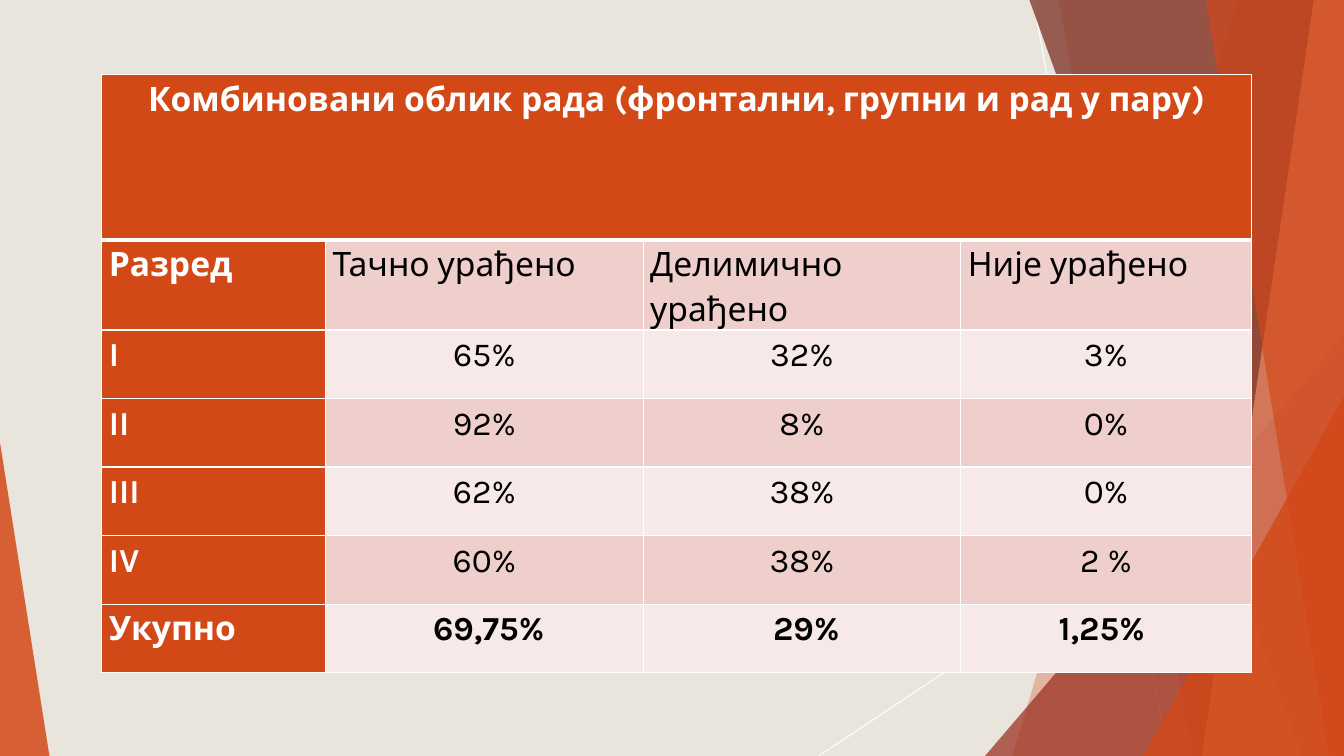
"""Build a slide with the results table for combined classroom work."""
import pptx
import pptx.dml.color
import pptx.enum.shapes
import pptx.enum.text
import pptx.oxml
import pptx.oxml.ns
import pptx.util

HEADING = "Комбиновани облик рада (фронтални, групни и рад у пару)"
RESULTS = [
    ("Разред", "Тачно урађено", "Делимично урађено", "Није урађено"),
    ("I", "65%", "32%", "3%"),
    ("II", "92%", "8%", "0%"),
    ("III", "62%", "38%", "0%"),
    ("IV", "60%", "38%", "2 %"),
    ("Укупно", " 69,75%", " 29%", "1,25% "),
]
COLORS = {
    "background": "E9E5DC", "orange": "D34817", "red": "9B2D1F",
    "maroon": "742217", "salmon": "EF8C6A", "white": "FFFFFF",
    "black": "000000", "dark band": "EFCFCC", "light band": "F7E9E8",
}
WIDTH, HEIGHT = 13.33, 7.5
TABLE_LEFT, TABLE_TOP = 1.01, 0.74
COLUMN_WIDTHS = [2.22, 3.15, 3.15, 2.88]
HEADING_HEIGHT, ROW_HEIGHT = 1.64, 0.68
CELL_MARGIN = 0.07
FONT, TEXT_SIZE, LINE_SPACING = "Karla", 24, 1.15
THIN, THICK = 1, 3
GUIDE_LINES = [(10.25, 0, 11.58, HEIGHT), (WIDTH, 4.03, 8.12, HEIGHT)]
FACETS = [
    ("band", 12.28, 10.04, "orange", 30),
    ("band", 10.5, 11.83, "orange", 20),
    ("triangle", 9.77, 3.33, 3.56, 1, "red", 72),
    ("band", 10.21, 12.91, "maroon", 70),
    ("band", 13.03, 11.92, "salmon", 70),
    ("band", 11.96, 13.18, "orange", 65),
    ("triangle", 11.34, 3.93, 1.99, 1, "orange", 80),
    ("triangle", 0, 4.39, 0.49, 0, "orange", 85),
]

inches = pptx.util.Inches


def rgb(name):
    """Return the named colour."""
    return pptx.dml.color.RGBColor.from_string(COLORS[name])


def add_guide_line(slide, start_x, start_y, end_x, end_y):
    """Draw one thin white background line."""
    connector = slide.shapes.add_connector(
        pptx.enum.shapes.MSO_CONNECTOR.STRAIGHT,
        inches(start_x), inches(start_y), inches(end_x), inches(end_y))
    connector.line.color.rgb = rgb("white")
    connector.line.width = pptx.util.Pt(0.75)
    properties = connector.element.find(pptx.oxml.ns.qn("p:spPr"))
    properties.append(pptx.oxml.parse_xml(
        f'<a:effectLst {pptx.oxml.ns.nsdecls("a")}/>'))


def add_facet(slide, kind, *details):
    """Draw one translucent facet reaching the bottom of the slide."""
    *geometry, color, opacity = details
    if kind == "band":
        top_x, bottom_x = geometry
        builder = slide.shapes.build_freeform(inches(top_x), 0)
        corners = [(WIDTH, 0), (WIDTH, HEIGHT), (bottom_x, HEIGHT)]
        builder.add_line_segments([(inches(x), inches(y)) for x, y in corners])
        shape = builder.convert_to_shape()
    else:
        left, top, width, apex = geometry
        shape = slide.shapes.add_shape(
            pptx.enum.shapes.MSO_SHAPE.ISOSCELES_TRIANGLE,
            inches(left), inches(top), inches(width), inches(HEIGHT - top))
        shape.adjustments[0] = apex
    shape.shadow.inherit = False
    shape.line.fill.background()
    shape.fill.solid()
    shape.fill.fore_color.rgb = rgb(color)
    tint = next(shape.element.spPr.iter(pptx.oxml.ns.qn("a:srgbClr")))
    tint.append(pptx.oxml.parse_xml(
        f'<a:alpha {pptx.oxml.ns.nsdecls("a")} val="{opacity * 1000}"/>'))


def format_cell(cell, fill, top=THIN, bottom=THIN):
    """Give a cell its white borders, fill and margins."""
    properties = cell._tc.get_or_add_tcPr()
    for side, points in (("L", THIN), ("R", THIN), ("T", top), ("B", bottom)):
        properties.append(pptx.oxml.parse_xml(
            f'<a:ln{side} {pptx.oxml.ns.nsdecls("a")} w="{points * 12700}">'
            f'<a:solidFill><a:srgbClr val="{COLORS["white"]}"/></a:solidFill>'
            f'</a:ln{side}>'))
    cell.fill.solid()
    cell.fill.fore_color.rgb = rgb(fill)
    cell.margin_left = cell.margin_right = inches(CELL_MARGIN)
    cell.margin_top = cell.margin_bottom = 0


def write_cell(cell, text, color, bold, centered):
    """Write one run of text in a cell."""
    paragraph = cell.text_frame.paragraphs[0]
    paragraph.line_spacing = LINE_SPACING
    alignment = pptx.enum.text.PP_ALIGN
    paragraph.alignment = alignment.CENTER if centered else alignment.LEFT
    run = paragraph.add_run()
    run.text = text
    run.font.name = FONT
    run.font.size = pptx.util.Pt(TEXT_SIZE)
    run.font.bold = bold
    run.font.color.rgb = rgb(color)


def add_results_table(slide):
    """Add the table: a merged heading above the rows of results."""
    row_count, column_count = len(RESULTS) + 1, len(COLUMN_WIDTHS)
    table = slide.shapes.add_table(
        row_count, column_count, inches(TABLE_LEFT), inches(TABLE_TOP),
        inches(sum(COLUMN_WIDTHS)),
        inches(HEADING_HEIGHT + ROW_HEIGHT * len(RESULTS))).table
    for column, width in zip(table.columns, COLUMN_WIDTHS):
        column.width = inches(width)
    for index, row in enumerate(table.rows):
        row.height = inches(ROW_HEIGHT if index else HEADING_HEIGHT)
    for column in range(column_count):
        format_cell(table.cell(0, column), "orange", bottom=THICK)
    table.cell(0, 0).merge(table.cell(0, column_count - 1))
    write_cell(table.cell(0, 0), HEADING, "white", True, True)
    for row, texts in enumerate(RESULTS, start=1):
        band = "dark band" if row % 2 else "light band"
        for column, text in enumerate(texts):
            cell = table.cell(row, column)
            is_label = column == 0
            format_cell(cell, "orange" if is_label else band,
                        top=THICK if row == 1 else THIN)
            write_cell(cell, text, "white" if is_label else "black",
                       is_label or row == len(RESULTS),
                       row > 1 and not is_label)


def main():
    """Build and save the presentation."""
    presentation = pptx.Presentation()
    presentation.slide_width = inches(WIDTH)
    presentation.slide_height = inches(HEIGHT)
    slide = presentation.slides.add_slide(presentation.slide_layouts[6])
    slide.background.fill.solid()
    slide.background.fill.fore_color.rgb = rgb("background")
    for guide_line in GUIDE_LINES:
        add_guide_line(slide, *guide_line)
    for facet in FACETS:
        add_facet(slide, *facet)
    add_results_table(slide)
    presentation.save("out.pptx")


if __name__ == "__main__":
    main()
